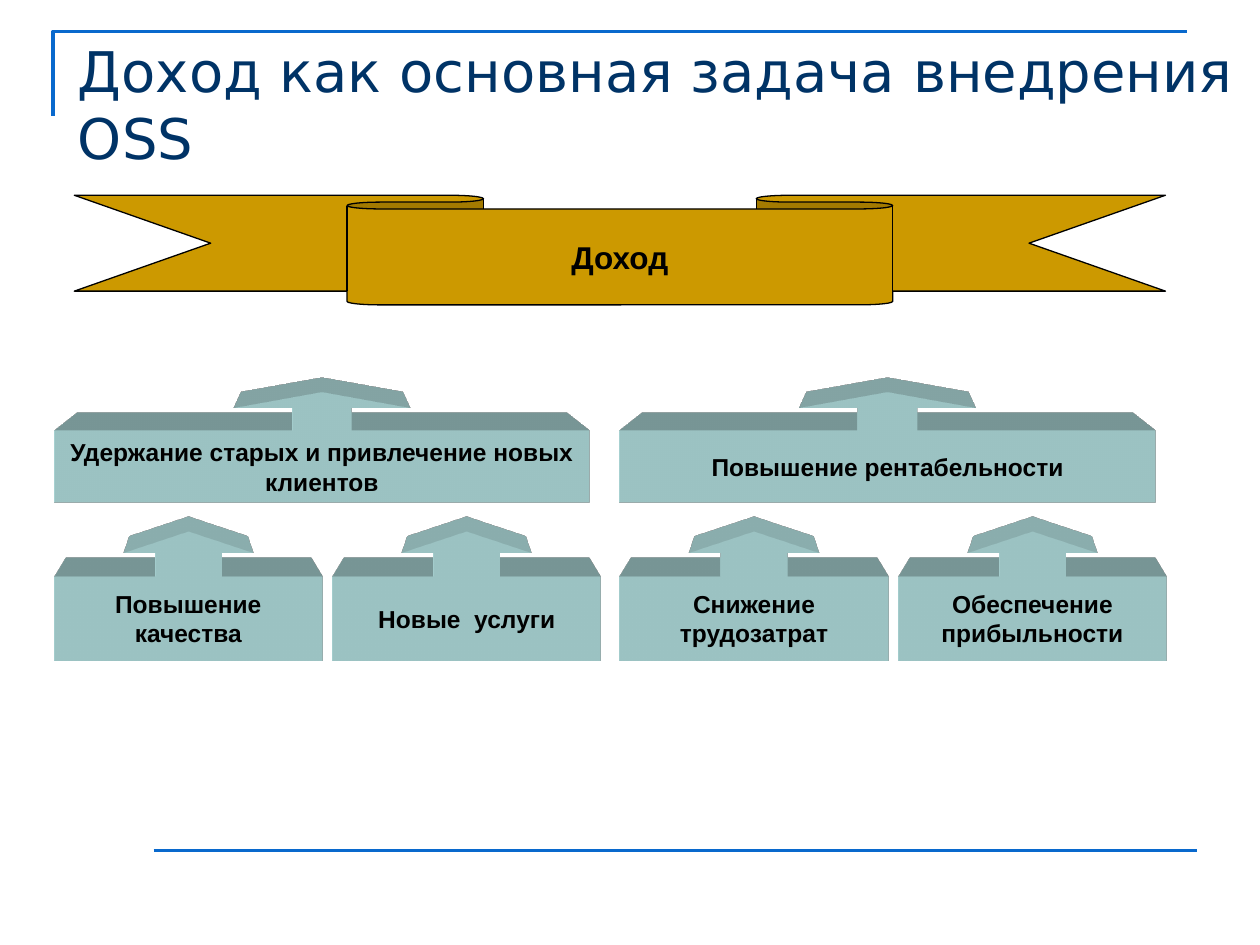
import pptx
import pptx.util
import pptx.dml.color
import pptx.enum.shapes
import pptx.enum.text
import pptx.oxml
import pptx.oxml.ns

SHAPE = pptx.enum.shapes.MSO_SHAPE
ALIGN = pptx.enum.text.PP_ALIGN
ANCHOR = pptx.enum.text.MSO_ANCHOR
NS = pptx.oxml.ns.nsdecls("a")

WIDE = pptx.util.Inches(10)
HIGH = pptx.util.Inches(7.5)
UNIT = WIDE / 100

BLUE, NAVY, GOLD, AQUA, BLACK = "0969CD", "003366", "CC9900", "CCFFFF", "000000"

SCENE = (f'<a:scene3d {NS}><a:camera prst="legacyPerspectiveTop"/>'
         '<a:lightRig rig="legacyFlat3" dir="b"/></a:scene3d>')
DEPTH = (f'<a:sp3d {NS} extrusionH="887400" prstMaterial="legacyMatte">'
         '<a:bevelT w="13500" h="13500" prst="angle"/>'
         '<a:bevelB w="13500" h="13500" prst="angle"/>'
         f'<a:extrusionClr><a:srgbClr val="{AQUA}"/></a:extrusionClr></a:sp3d>')

PAIRS = [
    (4.3, "Удержание старых и привлечение новых клиентов",
     ["Повышение качества", "Новые  услуги"]),
    (49.2, "Повышение рентабельности",
     ["Снижение трудозатрат", "Обеспечение прибыльности"]),
]


def color(code):
    return pptx.dml.color.RGBColor.from_string(code)


def grid(*cells):
    return [round(cell * UNIT) for cell in cells]


def write(frame, text, size, face, code, bold=False):
    run = frame.paragraphs[0].add_run()
    run.text = text
    run.font.size = pptx.util.Pt(size)
    run.font.name = face
    run.font.bold = bold
    run.font.color.rgb = color(code)


def block(slide, kind, box, adjust, fill, text, size):
    shape = slide.shapes.add_shape(kind, *grid(*box))
    for spot, value in enumerate(adjust):
        shape.adjustments[spot] = value
    shape.shadow.inherit = False
    shape.fill.solid()
    shape.fill.fore_color.rgb = color(fill)
    shape.line.fill.background()
    frame = shape.text_frame
    frame.word_wrap = True
    frame.vertical_anchor = ANCHOR.MIDDLE
    frame.paragraphs[0].alignment = ALIGN.CENTER
    write(frame, text, size, "Arial", BLACK, True)
    return shape


def frame_lines(slide, box):
    left, top, width, height = box
    build = slide.shapes.build_freeform(*grid(left, top + 6.7))
    build.add_line_segments([grid(left, top), grid(left + 90, top)], close=False)
    edge = build.convert_to_shape()
    edge.shadow.inherit = False
    edge.fill.background()
    base = slide.shapes.add_connector(
        pptx.enum.shapes.MSO_CONNECTOR.STRAIGHT,
        *grid(left + 8, top + height, left + width, top + height))
    base._element.spPr.append(pptx.oxml.parse_xml(f"<a:effectLst {NS}/>"))
    for part in (edge, base):
        part.line.color.rgb = color(BLUE)
        part.line.width = pptx.util.Pt(2)


def title(slide, box):
    frame = slide.shapes.add_textbox(*grid(*box)).text_frame
    frame.word_wrap = True
    frame.margin_top = round(0.8 * UNIT)
    write(frame, "Доход как основная задача внедрения OSS", 32, "DejaVu Sans", NAVY)


def banner(slide, box):
    shape = block(slide, SHAPE.DOWN_RIBBON, box, [0.125, 0.5], GOLD, "Доход", 18)
    shape.text_frame.word_wrap = False
    shape.line.color.rgb = color(BLACK)
    shape.line.width = pptx.util.Pt(0.75)


def arrow(slide, box, adjust, text):
    shape = block(slide, SHAPE.UP_ARROW_CALLOUT, box, adjust, AQUA, text, 14)
    for part in (SCENE, DEPTH):
        shape._element.spPr.append(pptx.oxml.parse_xml(part))


def branch(slide, box, goal, means):
    left, top, width, height = box
    arrow(slide, (left, top, 42.5, 8.7), [0.545, 0.807, 0.144, 0.653], goal)
    cell, low = 21.3, 10.2
    for spot, text in enumerate(means):
        place = left + spot * (width - cell)
        arrow(slide, (place, top + height - low, cell, low),
              [0.519, 0.506, 0.167, 0.653], text)


def main():
    deck = pptx.Presentation()
    deck.slide_width, deck.slide_height = WIDE, HIGH
    slide = deck.slides.add_slide(deck.slide_layouts[6])
    frame_lines(slide, (4.2, 2.5, 90.8, 65))
    title(slide, (5.2, 2.1, 94.8, 15.2))
    banner(slide, (5.9, 15.5, 86.6, 8.7))
    for left, goal, means in PAIRS:
        branch(slide, (left, 31.2, 43.4, 21.2), goal, means)
    deck.save("out.pptx")


if __name__ == "__main__":
    main()
